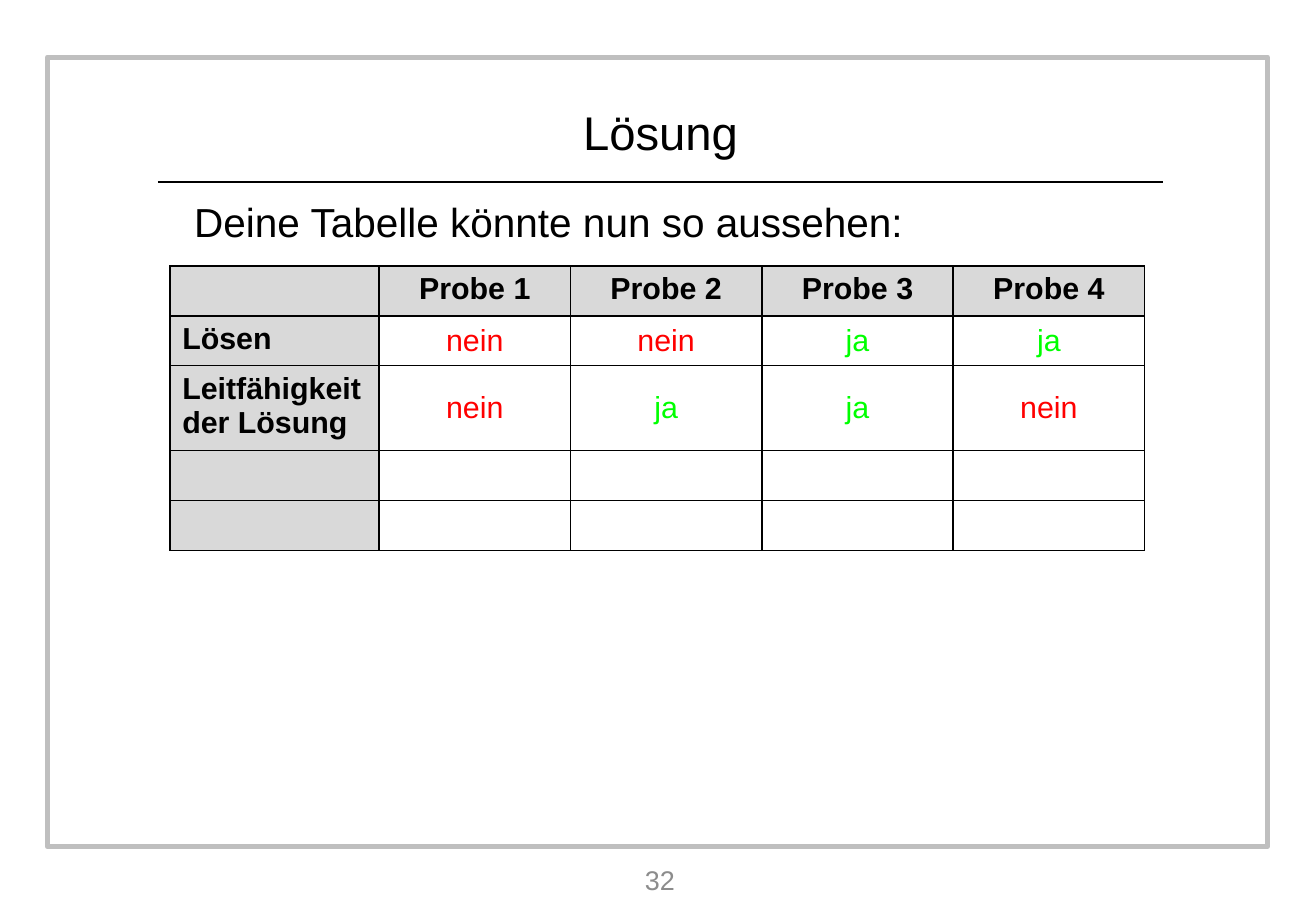
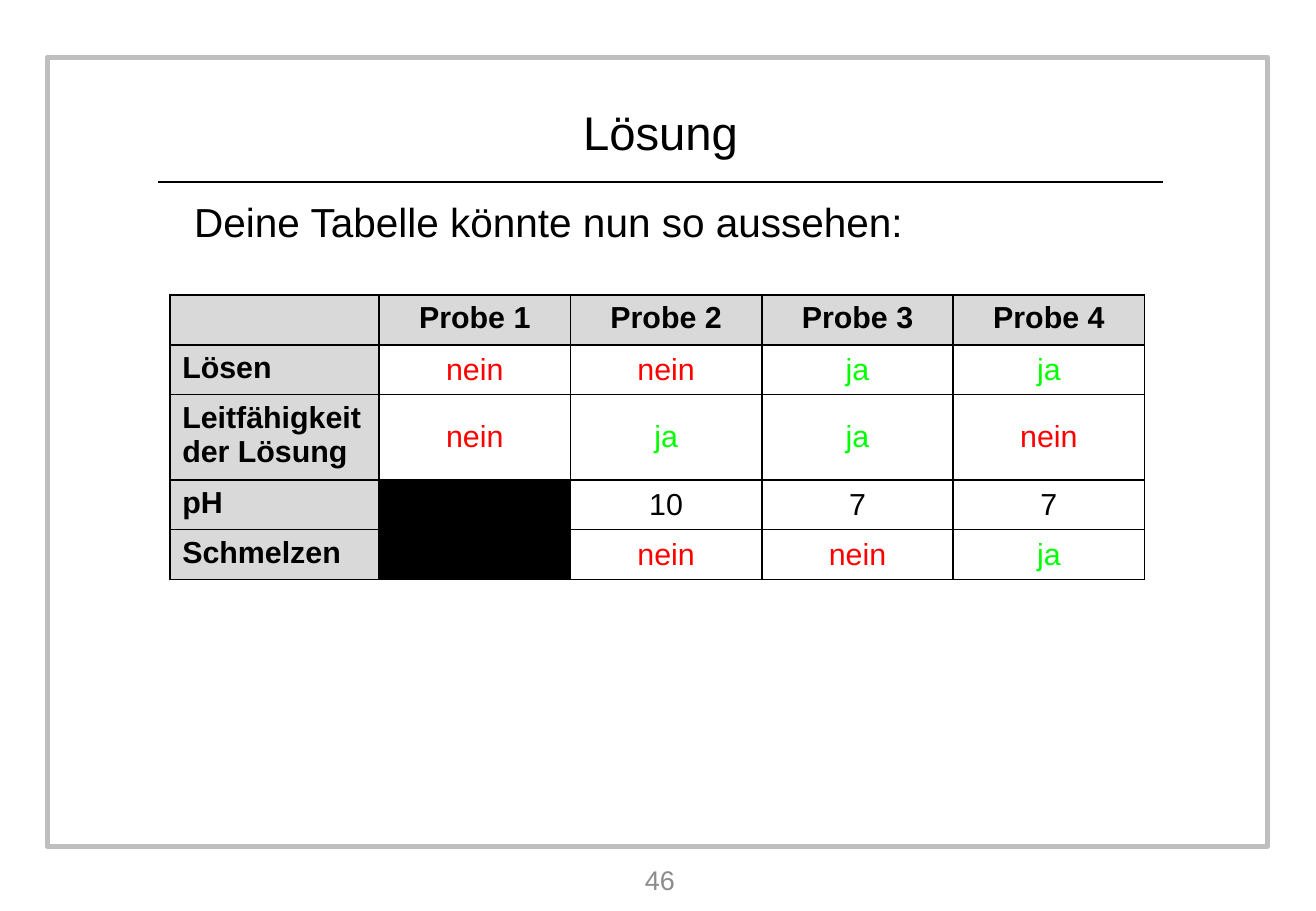
from lxml.etree import SubElement
from pptx import Presentation
from pptx.dml.color import RGBColor
from pptx.enum.shapes import MSO_CONNECTOR, MSO_SHAPE
from pptx.enum.text import MSO_ANCHOR, PP_ALIGN
from pptx.oxml.ns import qn
from pptx.util import Inches, Pt

FONT = "Arial"
COLORS = {"black": "000000", "frame": "BFBFBF", "header": "D9D9D9",
          "number": "8C8C8C", "nein": "FF0000", "ja": "00FF00"}
TITLE = "Lösung"
INTRO = "Deine Tabelle könnte nun so aussehen:"
BLOCKED = "blocked"

HEADER = ["", "Probe 1", "Probe 2", "Probe 3", "Probe 4"]
FIRST_TESTS = [
    ["Lösen", "nein", "nein", "ja", "ja"],
    ["Leitfähigkeit der Lösung", "nein", "ja", "ja", "nein"],
]
SLIDES = [
    {"number": "32", "table_top": 2.19,
     "rows": [HEADER, *FIRST_TESTS, [""] * 5, [""] * 5]},
    {"number": "46", "table_top": 2.43,
     "rows": [HEADER, *FIRST_TESTS,
              ["pH", BLOCKED, "10", "7", "7"],
              ["Schmelzen", BLOCKED, "nein", "nein", "ja"]]},
]

WIDTH, HEIGHT = 10.83, 7.5
TABLE_LEFT = 1.4
COLUMN_WIDTHS = [1.72] + [1.575] * 4
ROW_HEIGHTS = [0.41, 0.41, 0.66, 0.41, 0.41]


def rgb(name):
    return RGBColor.from_string(COLORS[name])


def write(frame, text, size, color="black", bold=False, align=PP_ALIGN.CENTER):
    para = frame.paragraphs[0]
    para.alignment = align
    span = para.add_run()
    span.text = text
    span.font.name = FONT
    span.font.size = Pt(size)
    span.font.bold = bold
    span.font.color.rgb = rgb(color)


def add_text(page, place, text, size, color="black", align=PP_ALIGN.CENTER,
             anchor=MSO_ANCHOR.MIDDLE, wrap=True):
    frame = page.shapes.add_textbox(*map(Inches, place)).text_frame
    frame.word_wrap = wrap
    frame.vertical_anchor = anchor
    write(frame, text, size, color, align=align)


def add_layout(page, number):
    """Draw the frame, title, rule, intro and page number of every slide."""
    frame = page.shapes.add_shape(
        MSO_SHAPE.RECTANGLE, *map(Inches, (0.39, 0.47, 10.04, 6.5)))
    frame.shadow.inherit = False
    frame.fill.background()
    frame.line.color.rgb = rgb("frame")
    frame.line.width = Pt(3)

    rule = page.shapes.add_connector(
        MSO_CONNECTOR.STRAIGHT, *map(Inches, (1.3, 1.5, 9.57, 1.5)))
    rule.line.color.rgb = rgb("black")
    rule.line.width = Pt(1.5)
    SubElement(rule._element.spPr, qn("a:effectLst"))

    add_text(page, (4.69, 0.79, 1.49, 0.59), TITLE, 28, wrap=False)
    add_text(page, (1.5, 1.57, 7.87, 4.72), INTRO, 24,
             align=PP_ALIGN.LEFT, anchor=MSO_ANCHOR.TOP)
    add_text(page, (4.21, 7.05, 2.44, 0.39), number, 16, "number")


def add_borders(cell):
    properties = cell._tc.get_or_add_tcPr()
    for side in ("lnL", "lnR", "lnT", "lnB"):
        line = SubElement(properties, qn(f"a:{side}"), w=str(Pt(1)))
        fill = SubElement(line, qn("a:solidFill"))
        SubElement(fill, qn("a:srgbClr"), val=COLORS["black"])


def fill_cell(cell, text, is_header, is_label):
    heading = is_header or is_label
    add_borders(cell)
    if heading or text == BLOCKED:
        cell.fill.solid()
        cell.fill.fore_color.rgb = rgb("header" if heading else "black")
    else:
        cell.fill.background()
    if not heading:
        cell.vertical_anchor = MSO_ANCHOR.MIDDLE
    if text and text != BLOCKED:
        write(cell.text_frame, text, 18, text if text in COLORS else "black",
              bold=heading, align=PP_ALIGN.LEFT if is_label else PP_ALIGN.CENTER)


def add_results(page, rows, top):
    table = page.shapes.add_table(
        len(rows), len(COLUMN_WIDTHS), Inches(TABLE_LEFT), Inches(top),
        Inches(sum(COLUMN_WIDTHS)), Inches(sum(ROW_HEIGHTS))).table
    for column, width in zip(table.columns, COLUMN_WIDTHS):
        column.width = Inches(width)
    for row, height in zip(table.rows, ROW_HEIGHTS):
        row.height = Inches(height)
    for r, texts in enumerate(rows):
        for c, text in enumerate(texts):
            fill_cell(table.cell(r, c), text, r == 0, c == 0)


def main():
    deck = Presentation()
    deck.slide_width, deck.slide_height = Inches(WIDTH), Inches(HEIGHT)
    for content in SLIDES:
        page = deck.slides.add_slide(deck.slide_layouts[6])
        add_layout(page, content["number"])
        add_results(page, content["rows"], content["table_top"])
    deck.save("out.pptx")


if __name__ == "__main__":
    main()
